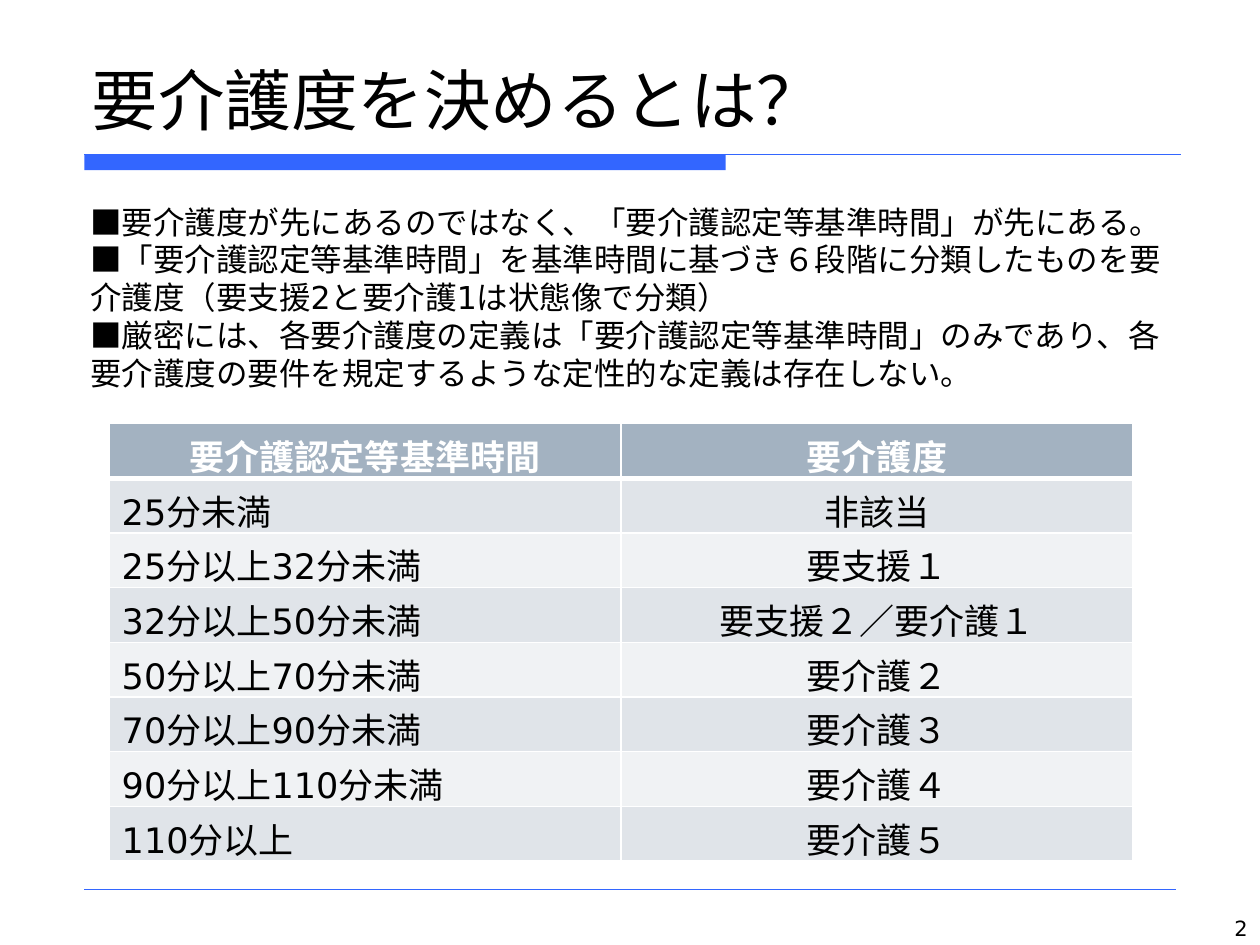
from lxml.etree import SubElement
from pptx import Presentation
from pptx.dml.color import RGBColor
from pptx.enum.shapes import MSO_CONNECTOR, MSO_SHAPE
from pptx.enum.text import MSO_ANCHOR, PP_ALIGN
from pptx.oxml.ns import qn
from pptx.util import Cm, Pt

FONT = "DejaVu Sans"
BLACK = RGBColor(0x00, 0x00, 0x00)
WHITE = RGBColor(0xFF, 0xFF, 0xFF)
BLUE = RGBColor(0x33, 0x66, 0xFF)
HEADER_FILL = RGBColor(0xA3, 0xB2, 0xC1)
BAND_FILLS = (RGBColor(0xE0, 0xE4, 0xE9), RGBColor(0xF0, 0xF2, 0xF4))

TITLE = "要介護度を決めるとは？"
POINTS = [
    "■要介護度が先にあるのではなく、「要介護認定等基準時間」が先にある。",
    "■「要介護認定等基準時間」を基準時間に基づき６段階に分類したものを要介護度（要支援2と要介護1は状態像で分類）",
    "■厳密には、各要介護度の定義は「要介護認定等基準時間」のみであり、各要介護度の要件を規定するような定性的な定義は存在しない。",
]
CARE_LEVELS = [
    ("要介護認定等基準時間", "要介護度"),
    ("25分未満", "非該当"),
    ("25分以上32分未満", "要支援１"),
    ("32分以上50分未満", "要支援２／要介護１"),
    ("50分以上70分未満", "要介護２"),
    ("70分以上90分未満", "要介護３"),
    ("90分以上110分未満", "要介護４"),
    ("110分以上", "要介護５"),
]
PAGE_NUMBER = "2"
COLUMN_WIDTH, ROW_HEIGHT = 10.32, 1.1


def write(para, text, size, color=BLACK, bold=False, align=PP_ALIGN.LEFT):
    para.alignment = align
    span = para.add_run()
    span.text = text
    span.font.name = FONT
    span.font.size = Pt(size)
    span.font.bold = bold
    span.font.color.rgb = color


def add_text(page, place, lines, size, anchor=MSO_ANCHOR.TOP, align=PP_ALIGN.LEFT):
    frame = page.shapes.add_textbox(*map(Cm, place)).text_frame
    frame.word_wrap = True
    frame.vertical_anchor = anchor
    for index, line in enumerate(lines):
        para = frame.add_paragraph() if index else frame.paragraphs[0]
        write(para, line, size, align=align)


def add_rule(page, left, right, top, width):
    rule = page.shapes.add_connector(
        MSO_CONNECTOR.STRAIGHT, Cm(left), Cm(top), Cm(right), Cm(top))
    rule.line.color.rgb = BLUE
    rule.line.width = Pt(width)
    SubElement(rule._element.spPr, qn("a:effectLst"))


def add_borders(cell, bottom):
    """Draw white cell edges, 1 pt wide except for the given bottom width."""
    properties = cell._tc.get_or_add_tcPr()
    widths = {"a:lnL": 1, "a:lnR": 1, "a:lnT": 1, "a:lnB": bottom}
    for position, (tag, width) in enumerate(widths.items()):
        edge = SubElement(properties, qn(tag), w=str(Pt(width)))
        fill = SubElement(edge, qn("a:solidFill"))
        SubElement(fill, qn("a:srgbClr"), val=str(WHITE))
        properties.insert(position, edge)


def add_care_table(page, left, top):
    rows, columns = len(CARE_LEVELS), len(CARE_LEVELS[0])
    table = page.shapes.add_table(
        rows, columns, Cm(left), Cm(top),
        Cm(columns * COLUMN_WIDTH), Cm(rows * ROW_HEIGHT)).table
    for column in table.columns:
        column.width = Cm(COLUMN_WIDTH)
    for row, texts in enumerate(CARE_LEVELS):
        table.rows[row].height = Cm(ROW_HEIGHT)
        header = row == 0
        for column, text in enumerate(texts):
            cell = table.cell(row, column)
            cell.fill.solid()
            cell.fill.fore_color.rgb = HEADER_FILL if header else BAND_FILLS[(row - 1) % 2]
            centred = header or column == 1
            write(cell.text_frame.paragraphs[0], text, 20,
                  WHITE if header else BLACK, header,
                  PP_ALIGN.CENTER if centred else PP_ALIGN.LEFT)
            add_borders(cell, 3 if header else 1)


def main():
    deck = Presentation()
    deck.slide_width, deck.slide_height = Cm(25.4), Cm(19.05)
    page = deck.slides.add_slide(deck.slide_layouts[6])

    title_bar = page.shapes.add_shape(
        MSO_SHAPE.RECTANGLE, Cm(1.7), Cm(3.12), Cm(12.93), Cm(0.31))
    title_bar.shadow.inherit = False
    title_bar.fill.solid()
    title_bar.fill.fore_color.rgb = BLUE
    title_bar.line.fill.background()
    add_rule(page, 1.7, 23.8, 3.12, 0.75)
    add_rule(page, 1.7, 23.7, 17.93, 0.25)

    add_text(page, (1.6, 0.84, 22.22, 2.08), [TITLE], 38, MSO_ANCHOR.BOTTOM)
    add_text(page, (1.57, 3.96, 22.63, 4.11), POINTS, 18)
    add_care_table(page, 2.2, 8.54)
    add_text(page, (20.09, 18.34, 5.31, 0.71), [PAGE_NUMBER], 12, align=PP_ALIGN.RIGHT)

    deck.save("out.pptx")


if __name__ == "__main__":
    main()
